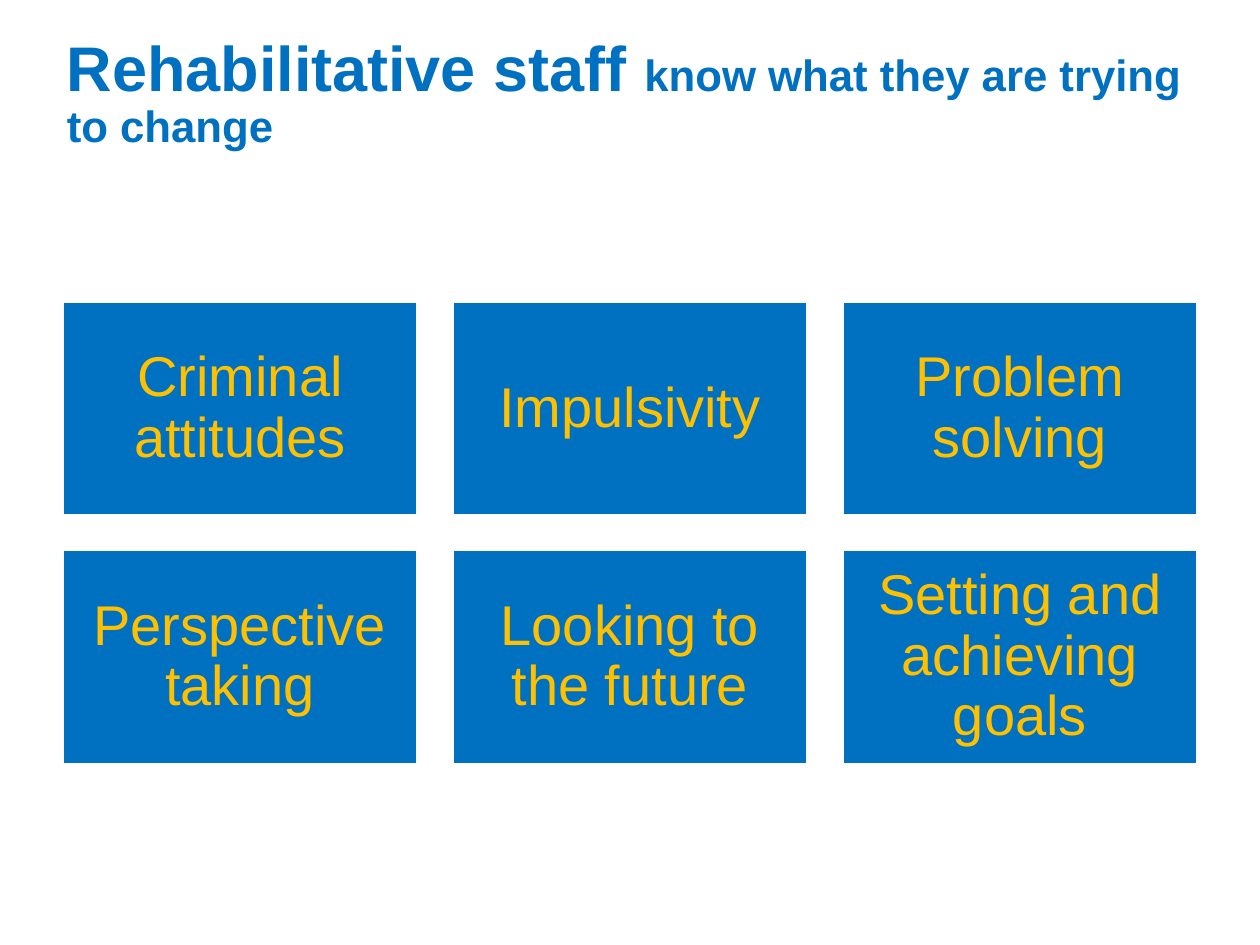
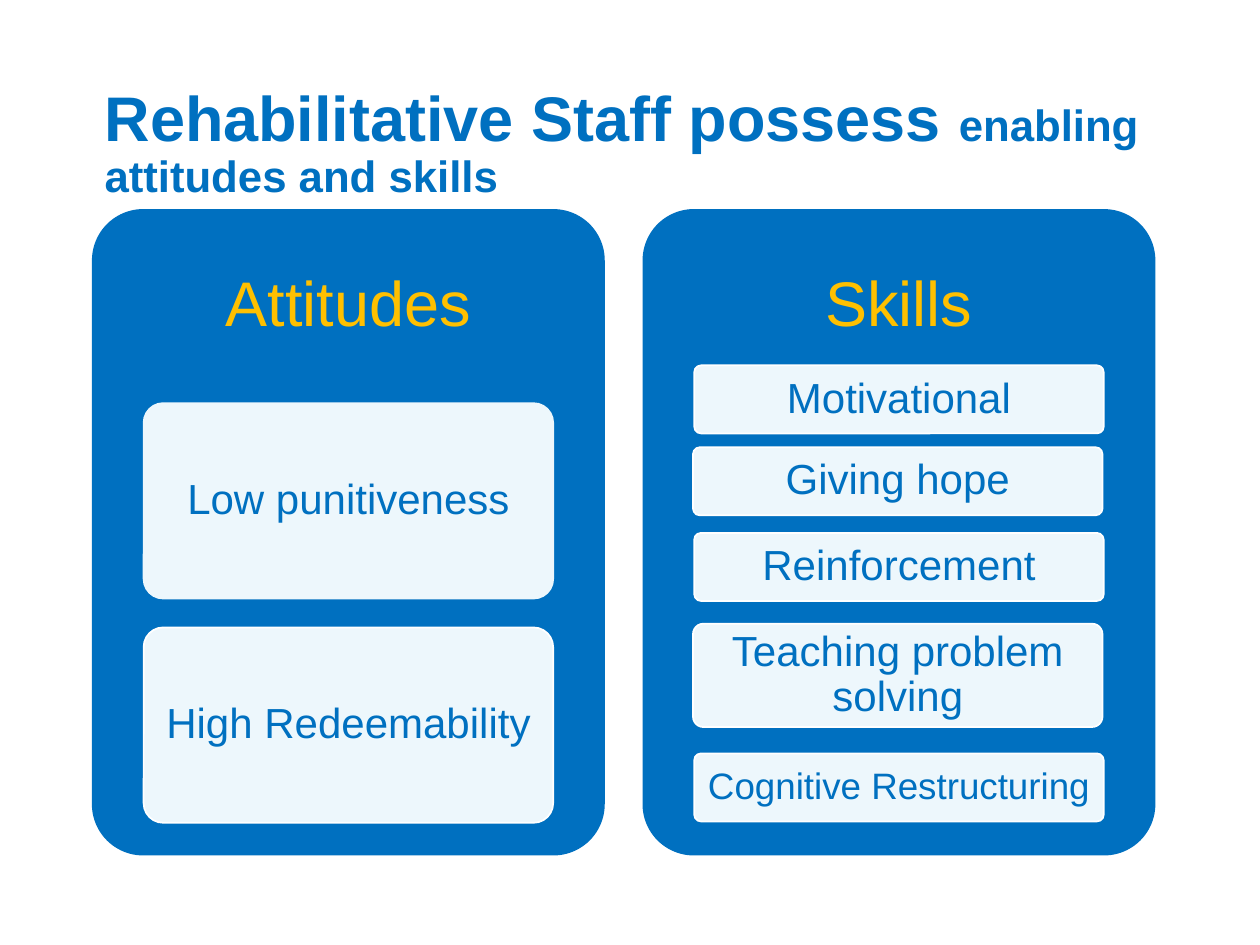
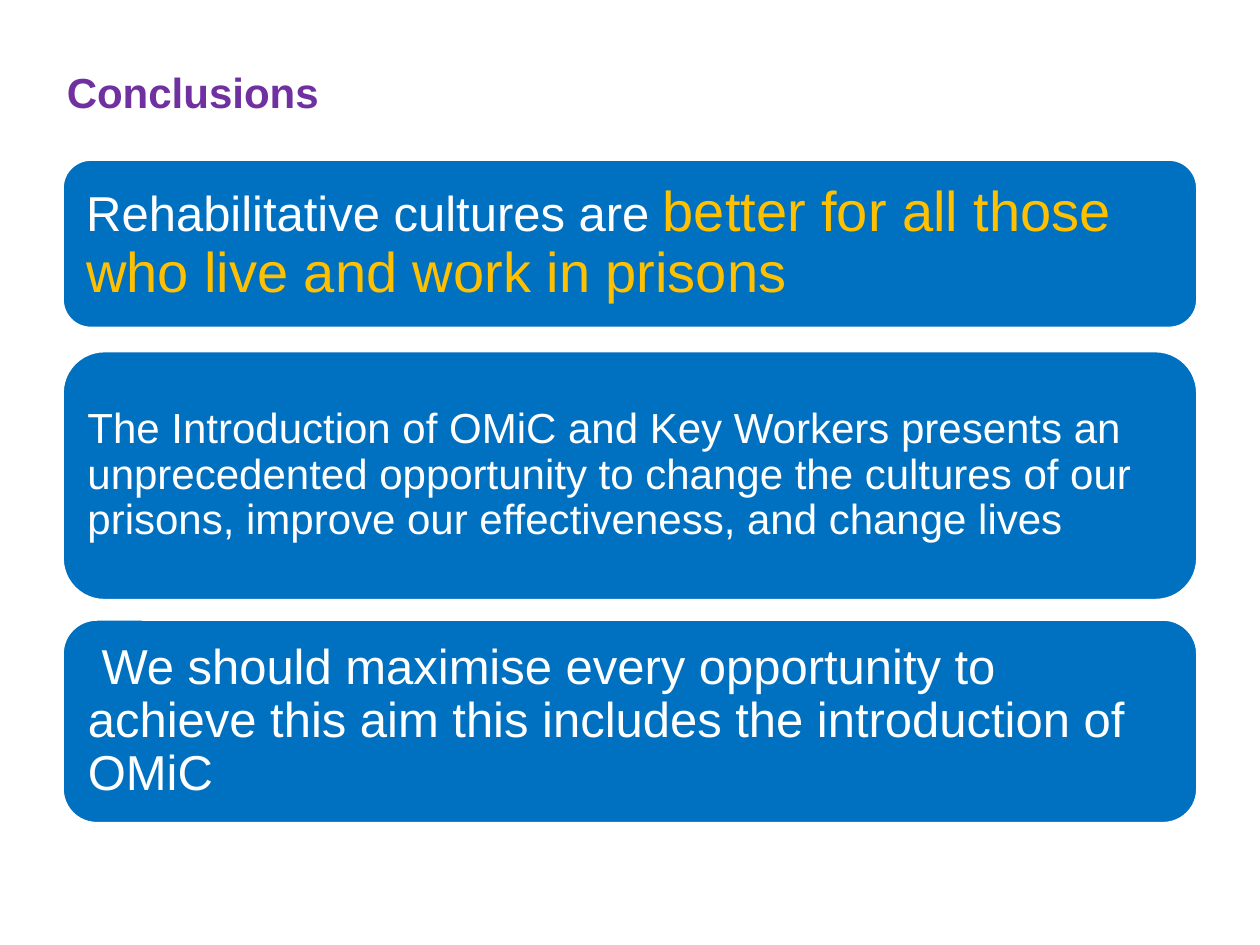
from pptx import Presentation
from pptx.dml.color import RGBColor
from pptx.enum.shapes import MSO_SHAPE
from pptx.enum.text import MSO_ANCHOR, MSO_AUTO_SIZE, PP_ALIGN
from pptx.util import Inches, Pt

RECTANGLE = MSO_SHAPE.RECTANGLE
ROUNDED = MSO_SHAPE.ROUNDED_RECTANGLE
MIDDLE = MSO_ANCHOR.MIDDLE
NO_FIT = MSO_AUTO_SIZE.NONE
LEFT, CENTER = PP_ALIGN.LEFT, PP_ALIGN.CENTER

COLORS = {
    "blue": "0070C0",
    "gold": "FFC000",
    "pale": "EDF7FC",
    "purple": "7030A0",
    "white": "FFFFFF",
}
FONT = "Arial"
TITLE_ONLY = 5
TITLE_AREA = (0.43, 0.47, 9.13, 0.56)


def color(name):
    return RGBColor.from_string(COLORS[name])


def write(shape, spans, align=CENTER, inset=(0.1, 0.05), bold=False):
    """Fill a shape with one paragraph of (text, size, color) spans."""
    frame = shape.text_frame
    frame.word_wrap = True
    frame.auto_size = NO_FIT
    frame.vertical_anchor = MIDDLE
    frame.margin_left = frame.margin_right = Inches(inset[0])
    frame.margin_top = frame.margin_bottom = Inches(inset[1])
    para = frame.paragraphs[0]
    para.alignment = align
    para.line_spacing = 0.9
    for text, size, ink in spans:
        span = para.add_run()
        span.text = text
        span.font.name = FONT
        span.font.size = Pt(size)
        span.font.bold = bold
        span.font.color.rgb = color(ink)


class DeckBuilder:
    """Holds the deck, its style and the current page."""

    def __init__(self):
        self.deck = Presentation()
        self.deck.slide_width = Inches(10)
        self.deck.slide_height = Inches(7.5)
        self.page = None

    def add_page(self, *title_spans, area=TITLE_AREA):
        layout = self.deck.slide_layouts[TITLE_ONLY]
        self.page = self.deck.slides.add_slide(layout)
        title = self.page.shapes.title
        title.left, title.top, title.width, title.height = map(Inches, area)
        write(title, title_spans, align=LEFT, bold=True)

    def box(self, area, *spans, kind=ROUNDED, corner=None, fill="blue",
            line="white", **text_format):
        box = self.page.shapes.add_shape(kind, *map(Inches, area))
        box.shadow.inherit = False
        if corner is not None:
            box.adjustments[0] = corner
        box.fill.solid()
        box.fill.fore_color.rgb = color(fill)
        if line:
            box.line.color.rgb = color(line)
            box.line.width = Pt(1)
        else:
            box.line.fill.background()
        if spans:
            write(box, spans, **text_format)

    def label(self, area, *spans, **text_format):
        label = self.page.shapes.add_textbox(*map(Inches, area))
        write(label, spans, **text_format)

    def panel(self, left, heading):
        top, width = 1.66, 4.07
        self.box((left, top, width, 5.13), corner=0.1, line=None)
        self.label((left, top, width, 1.54), (heading, 36, "gold"),
                   inset=(0.15, 0.15))

    def card(self, left, top, height, text, size=24, line="white",
             inset=(0.07, 0.05)):
        self.box((left, top, 3.25, height), (text, size, "blue"),
                 corner=0.1, fill="pale", line=line, inset=inset)


def add_targets(builder):
    builder.add_page(("Rehabilitative staff ", 36, "blue"),
                     ("know what they are trying to change", 25, "blue"))
    targets = ["Criminal attitudes", "Impulsivity", "Problem solving",
               "Perspective taking", "Looking to the future",
               "Setting and achieving goals"]
    width, height = 2.81, 1.69
    column_step, row_step = (9 - width) / 2, 1.97
    for index, target in enumerate(targets):
        row, column = divmod(index, 3)
        area = (0.5 + column * column_step, 2.4 + row * row_step,
                width, height)
        builder.box(area, (target, 32, "gold"), kind=RECTANGLE,
                    inset=(0.13, 0.13))


def add_attitudes_and_skills(builder):
    builder.add_page(("Rehabilitative Staff possess ", 36, "blue"),
                     ("enabling attitudes and skills", 25, "blue"),
                     area=(0.73, 0.28, 8.59, 1.73))
    builder.panel(0.73, "Attitudes")
    builder.card(1.14, 3.2, 1.55, "Low punitiveness", line="pale")
    builder.card(1.14, 4.98, 1.55, "High Redeemability")

    builder.panel(5.1, "Skills")
    skills = [
        (5.51, 2.9, 0.54, "Motivational"),
        (5.5, 3.55, 0.54, "Giving hope"),
        (5.51, 4.23, 0.54, "Reinforcement"),
        (5.5, 4.95, 0.82, "Teaching problem solving"),
    ]
    for skill in skills:
        builder.card(*skill)
    builder.card(5.51, 5.98, 0.54, "Cognitive Restructuring", size=21,
                 inset=(0.06, 0.04))


def add_conclusions(builder):
    builder.add_page(("Conclusions", 24, "purple"))
    conclusions = [
        (1.27, 1.33, 0.12, [
            ("Rehabilitative cultures are ", 28, "white"),
            ("better for all those who live and work in prisons",
             32, "gold")]),
        (2.79, 1.97, 0.1, [
            ("The Introduction of OMiC and Key Workers presents an "
             "unprecedented opportunity to change the cultures of our "
             "prisons, improve our effectiveness, and change lives",
             24, "white")]),
        (4.92, 1.61, 0.12, [
            (" We should maximise every opportunity to achieve this aim "
             "this includes the introduction of OMiC", 28, "white")]),
    ]
    for top, height, inset, spans in conclusions:
        builder.box((0.5, top, 9, height), *spans, align=LEFT,
                    inset=(inset, inset))


def main():
    builder = DeckBuilder()
    add_targets(builder)
    add_attitudes_and_skills(builder)
    add_conclusions(builder)
    builder.deck.save("out.pptx")


if __name__ == "__main__":
    main()
